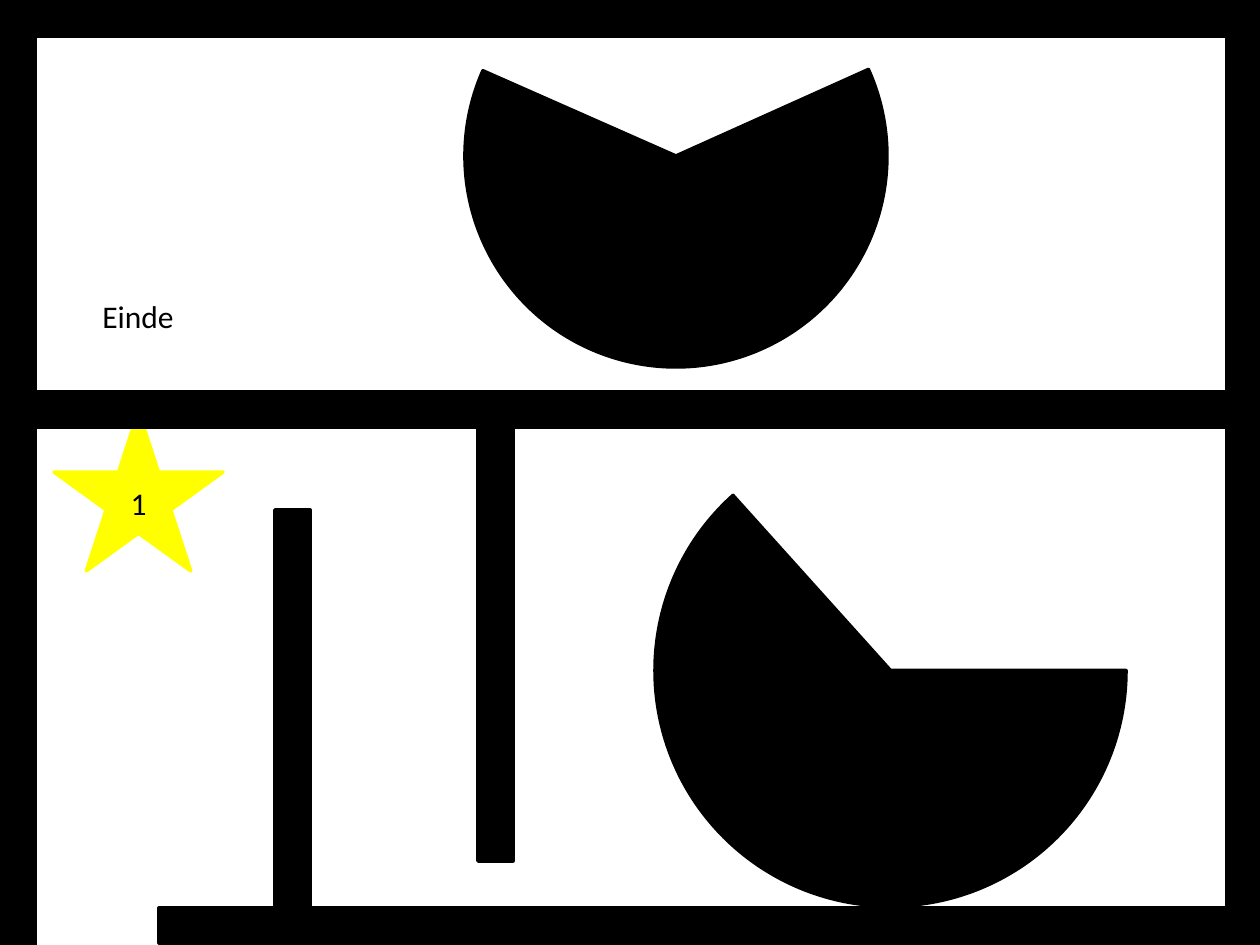
import pptx
import pptx.util
import pptx.dml.color
import pptx.enum.shapes
import pptx.enum.text

PX = 914400 // 126
COLORS = {"wall": "000000", "paper": "FFFFFF", "star": "FFFF00", "text": "000000"}
SHAPE = pptx.enum.shapes.MSO_SHAPE
THICK, WIDE, TALL = 35, 1271, 433

prs = pptx.Presentation()
prs.slide_width = pptx.util.Inches(10)
prs.slide_height = pptx.util.Inches(7.5)
s = prs.slides.add_slide(prs.slide_layouts[6])


def add_block(kind, box, color, rotation=0):
    sp = s.shapes.add_shape(kind, *[v * PX for v in box])
    sp.rotation = rotation
    sp.shadow.inherit = False
    rgb = pptx.dml.color.RGBColor.from_string(COLORS[color])
    sp.fill.solid()
    sp.fill.fore_color.rgb = rgb
    sp.line.color.rgb = rgb
    sp.line.width = pptx.util.Pt(2)
    return sp


def add_label(sp, text):
    tf = sp.text_frame
    tf.word_wrap = True
    tf.vertical_anchor = pptx.enum.text.MSO_ANCHOR.MIDDLE
    p = tf.paragraphs[0]
    p.alignment = pptx.enum.text.PP_ALIGN.CENTER
    r = p.add_run()
    r.text = text
    r.font.name = "Calibri"
    r.font.size = pptx.util.Pt(18)
    r.font.color.rgb = pptx.dml.color.RGBColor.from_string(COLORS["text"])


outer_walls = [
    (0, 0, 945, 0),
    (1227, 0, 945, 0),
    (615, -617, WIDE, 90),
    (692, 375, 1101, 90),
]
for x, y, length, rotation in outer_walls:
    add_block(SHAPE.RECTANGLE, (x, y, THICK, length), "wall", rotation)

add_label(add_block(SHAPE.RECTANGLE, (84, 294, 108, 44), "paper"), "Einde")
add_label(add_block(SHAPE.STAR_5_POINT, (54, 411, 169, 160), "star"), "1")

inner_walls = [(619, -226, WIDE, 90), (275, 510, TALL, 0), (478, 428, TALL, 0)]
for x, y, length, rotation in inner_walls:
    add_block(SHAPE.RECTANGLE, (x, y, THICK, length), "wall", rotation)

for x, y, size, rotation in [(655, 435, 471, 0), (465, -55, 422, 335.8)]:
    pie = add_block(SHAPE.PIE, (x, y, size, size), "wall", rotation)
    pie.adjustments[0] = 0
    pie.adjustments[1] = 136.81

prs.save("out.pptx")
